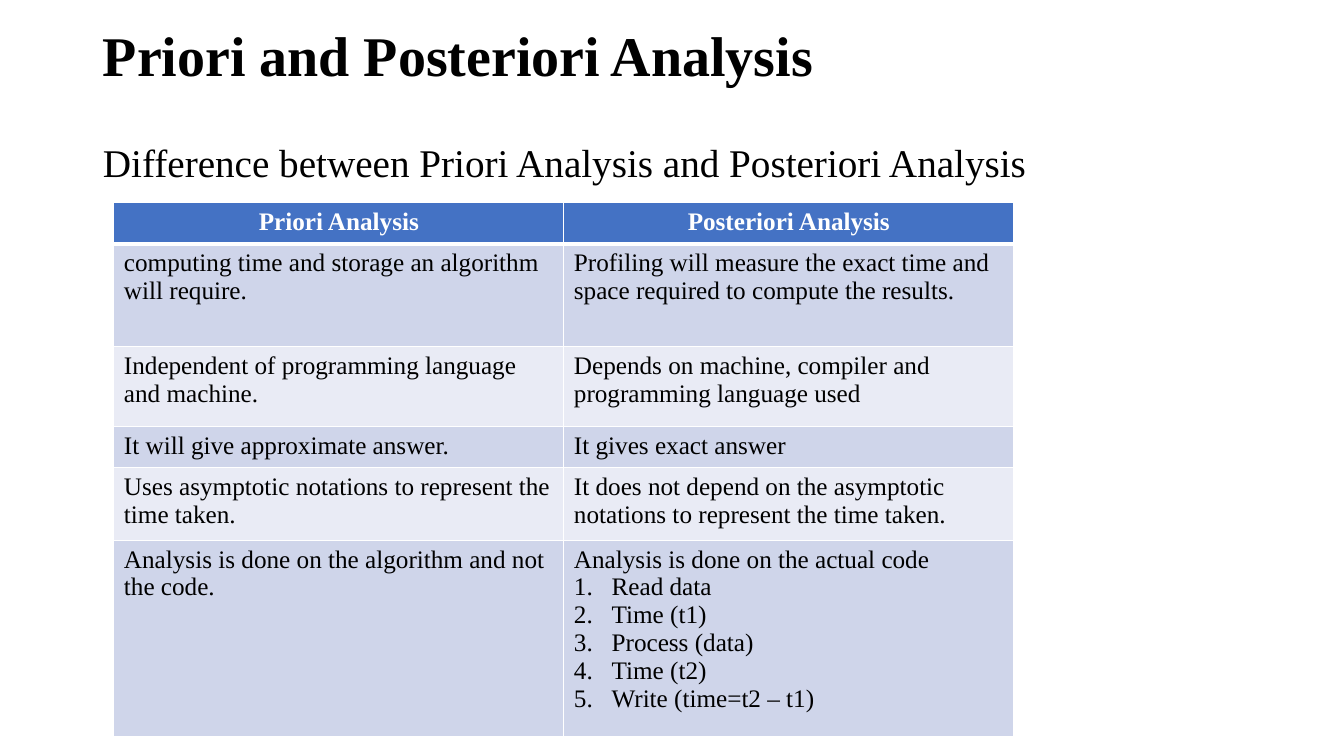
from lxml.etree import SubElement
from pptx import Presentation
from pptx.dml.color import RGBColor
from pptx.enum.text import MSO_ANCHOR, MSO_AUTO_SIZE, PP_ALIGN
from pptx.oxml.ns import qn
from pptx.util import Cm, Pt

FONT = "Times New Roman"
BLACK = RGBColor(0x00, 0x00, 0x00)
WHITE = RGBColor(0xFF, 0xFF, 0xFF)
HEADER_BLUE = RGBColor(0x44, 0x72, 0xC4)
BAND_DARK = RGBColor(0xCF, 0xD5, 0xEA)
BAND_LIGHT = RGBColor(0xE9, 0xEB, 0xF5)

LIST_INDENT = Cm(0.95)
COL_WIDTH = Cm(11.34)
ROW_HEIGHTS = [1.04, 2.59, 2.01, 1.04, 1.83, 4.93]
CODE_STEPS = [
    "Analysis is done on the actual code",
    "Read data",
    "Time (t1)",
    "Process (data)",
    "Time (t2)",
    "Write (time=t2 – t1)",
]
ROWS = [
    (["Priori Analysis"], ["Posteriori Analysis"]),
    (["computing time and storage an algorithm will require."],
     ["Profiling will measure the exact time and space required to compute the results."]),
    (["Independent of programming language and machine."],
     ["Depends on machine, compiler and programming language used"]),
    (["It will give approximate answer."], ["It gives exact answer"]),
    (["Uses asymptotic notations to represent the time taken."],
     ["It does not depend on the asymptotic notations to represent the time taken."]),
    (["Analysis is done on the algorithm and not the code."], CODE_STEPS),
]


def add_run(p, text, size, color=BLACK, bold=False):
    r = p.add_run()
    r.text = text
    r.font.name = FONT
    r.font.size = Pt(size)
    r.font.bold = bold
    r.font.color.rgb = color


def set_indent(p, indent, bullet):
    pPr = p._p.get_or_add_pPr()
    pPr.set("marL", str(indent))
    pPr.set("indent", str(-indent))
    if bullet == "number":
        SubElement(pPr, qn("a:buFont"), typeface="+mj-lt")
        SubElement(pPr, qn("a:buAutoNum"), type="arabicPeriod")
    else:
        SubElement(pPr, qn("a:buNone"))


def fill_placeholder(sp, top, height, anchor, text, size, bold=False):
    sp.left, sp.top, sp.width, sp.height = Cm(2.34), top, Cm(29.21), height
    tf = sp.text_frame
    tf.word_wrap = True
    tf.auto_size = MSO_AUTO_SIZE.NONE
    tf.vertical_anchor = anchor
    p = tf.paragraphs[0]
    p.alignment = PP_ALIGN.LEFT
    p.line_spacing = 0.9
    add_run(p, text, size, bold=bold)
    return p


def set_borders(cell, top, bottom):
    tcPr = cell._tc.get_or_add_tcPr()
    for side, width in (("L", 1), ("R", 1), ("T", top), ("B", bottom)):
        ln = SubElement(tcPr, qn(f"a:ln{side}"), w=str(Pt(width)))
        fill = SubElement(ln, qn("a:solidFill"))
        SubElement(fill, qn("a:srgbClr"), val=str(WHITE))


def fill_cell(cell, lines, row):
    header = row == 0
    set_borders(cell, 3 if row == 1 else 1, 3 if header else 1)
    cell.fill.solid()
    band = BAND_DARK if row % 2 else BAND_LIGHT
    cell.fill.fore_color.rgb = HEADER_BLUE if header else band
    tf = cell.text_frame
    for i, line in enumerate(lines):
        p = tf.add_paragraph() if i else tf.paragraphs[0]
        p.alignment = PP_ALIGN.CENTER if header else PP_ALIGN.LEFT
        if len(lines) > 1:
            set_indent(p, LIST_INDENT, "number" if i else None)
        add_run(p, line, 18, WHITE if header else BLACK, header)


def add_comparison(s):
    frame = s.shapes.add_table(len(ROWS), 2, Cm(2.87), Cm(5.11),
                               2 * COL_WIDTH, Cm(sum(ROW_HEIGHTS)))
    table = frame.table
    for col in table.columns:
        col.width = COL_WIDTH
    for i, (height, texts) in enumerate(zip(ROW_HEIGHTS, ROWS)):
        table.rows[i].height = Cm(height)
        for cell, lines in zip(table.rows[i].cells, texts):
            fill_cell(cell, lines, i)


def main():
    prs = Presentation()
    prs.slide_width, prs.slide_height = Cm(33.87), Cm(19.05)
    s = prs.slides.add_slide(prs.slide_layouts[1])
    fill_placeholder(s.shapes.title, Cm(0), Cm(2.95), MSO_ANCHOR.MIDDLE,
                     "Priori and Posteriori Analysis", 40, bold=True)
    p = fill_placeholder(s.placeholders[1], Cm(3.5), Cm(12.09), MSO_ANCHOR.TOP,
                         "Difference between Priori Analysis and Posteriori Analysis", 28)
    p.space_before = Pt(10)
    set_indent(p, Cm(0.64), None)
    add_comparison(s)
    prs.save("out.pptx")


if __name__ == "__main__":
    main()
